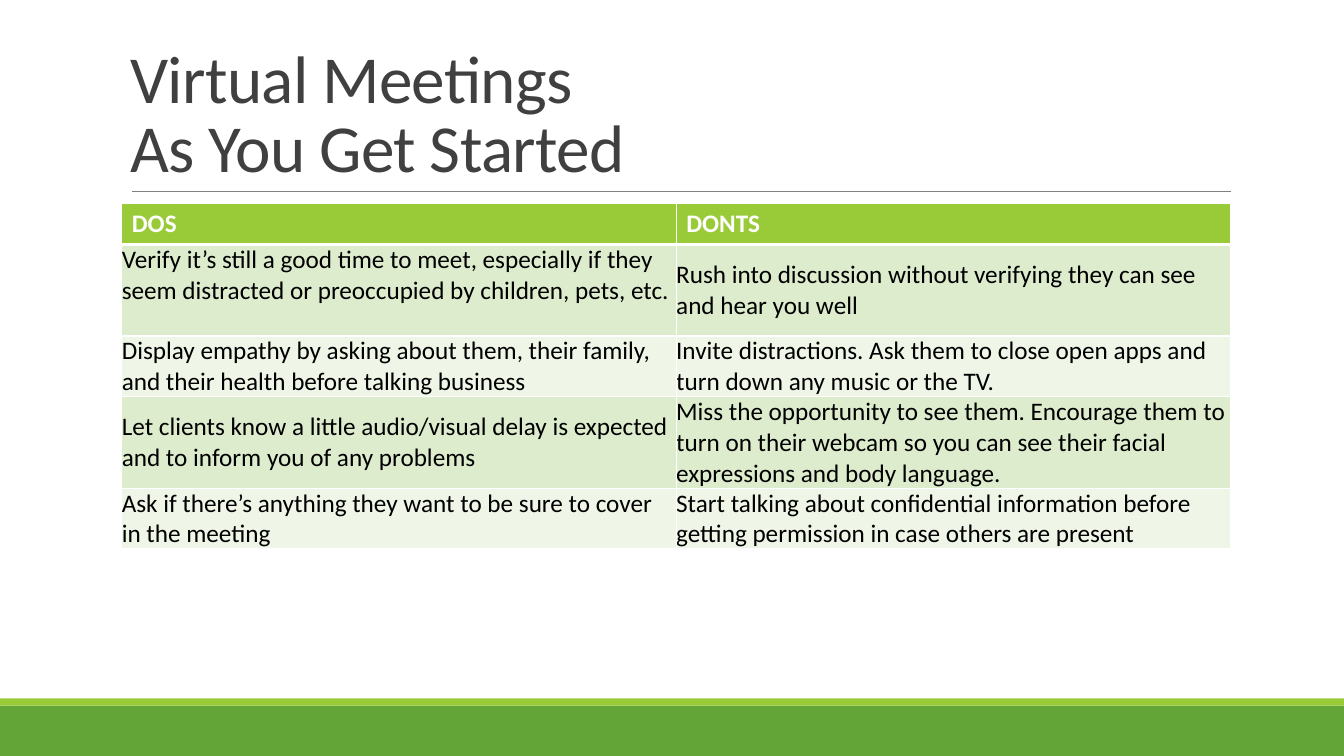
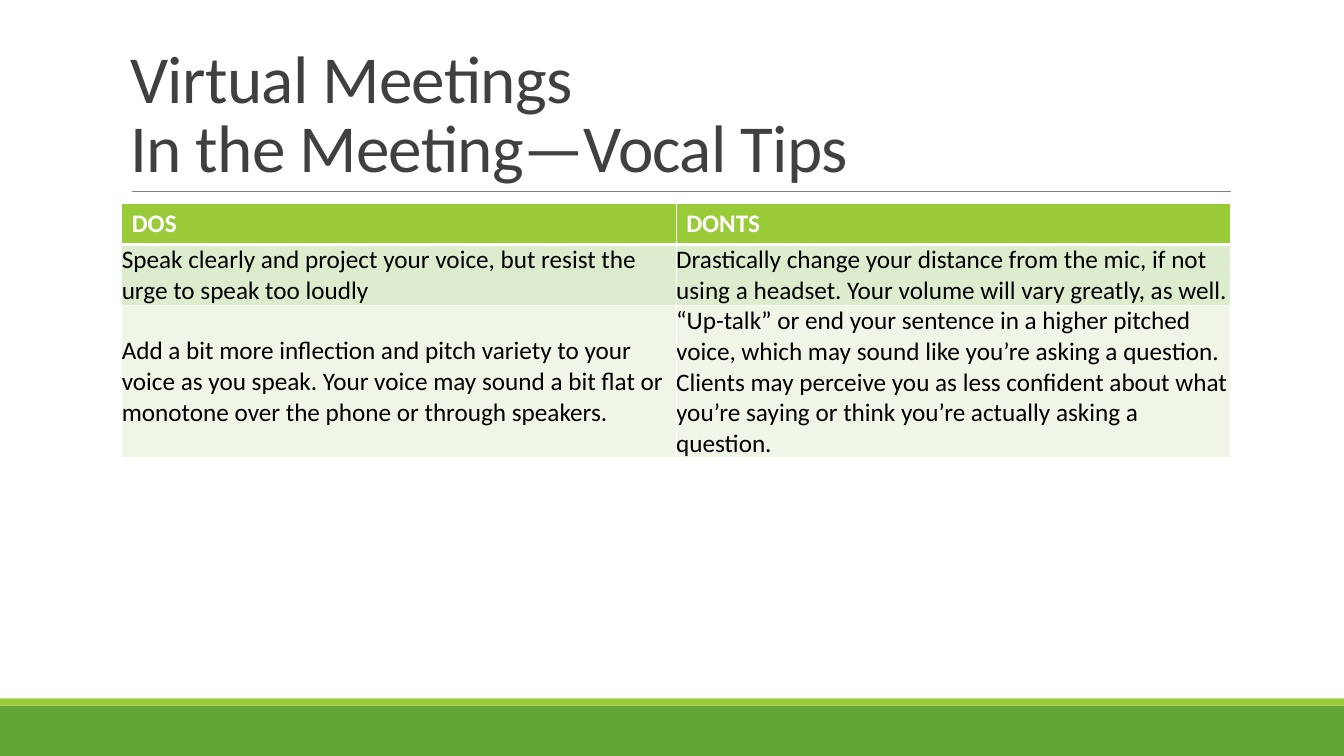
from dataclasses import dataclass

from lxml.etree import SubElement
from pptx import Presentation
from pptx.dml.color import RGBColor
from pptx.enum.shapes import MSO_CONNECTOR as Connector, MSO_SHAPE as Preset
from pptx.enum.text import MSO_ANCHOR as Anchor
from pptx.oxml.ns import qn
from pptx.util import Emu, Pt


@dataclass(frozen=True)
class Theme:
    """Colours, font and type sizes of the deck."""
    font: str = "Calibri"
    title_size: int = 48
    body_size: int = 18
    title: str = "404040"
    body: str = "000000"
    white: str = "FFFFFF"
    rule: str = "808080"
    green: str = "63A537"
    lime: str = "99CB38"
    stripes: tuple = ("DEECCE", "EFF6E8")


@dataclass(frozen=True)
class Tip:
    """One table row: its height in text lines and its two sentences."""
    lines: int
    do: str
    dont: str
    do_anchor: Anchor = Anchor.MIDDLE


WIDTH, HEIGHT = 1280, 720
TABLE_LEFT, TABLE_TOP = 116, 194
COLUMN_WIDTH, HEADER_HEIGHT, LINE_HEIGHT = 528, 39, 29


def px(length):
    """Turn pixels at 96 to the inch into EMU."""
    return Emu(length * 9525)


class Deck:
    """Holds the style and the current slide."""

    def __init__(self, theme):
        """Start an empty widescreen presentation."""
        self.theme = theme
        self.presentation = Presentation()
        self.presentation.slide_width = px(WIDTH)
        self.presentation.slide_height = px(HEIGHT)
        self.slide = None

    def add_slide(self, *title_lines):
        """Add a slide with the shared bands, rule and title."""
        layout = self.presentation.slide_layouts[6]
        self.slide = self.presentation.slides.add_slide(layout)
        self.band(672, 48, self.theme.green)
        self.band(665, 7, self.theme.lime)
        self.rule(126, 1172, 182)
        self.title(title_lines)

    def band(self, top, height, color):
        """Draw a full-width band."""
        shape = self.slide.shapes.add_shape(
            Preset.RECTANGLE, 0, px(top), px(WIDTH), px(height))
        shape.shadow.inherit = False
        shape.fill.solid()
        shape.fill.fore_color.rgb = RGBColor.from_string(color)
        shape.line.fill.background()

    def rule(self, left, right, y):
        """Draw the thin line below the title."""
        line = self.slide.shapes.add_connector(
            Connector.STRAIGHT, px(left), px(y), px(right), px(y))
        line.line.color.rgb = RGBColor.from_string(self.theme.rule)
        line.line.width = Pt(0.5)
        SubElement(line._element.spPr, qn("a:effectLst"))

    def run(self, paragraph, text, size, color, bold=False):
        """Add one styled run to a paragraph."""
        run = paragraph.add_run()
        run.text = text
        run.font.name = self.theme.font
        run.font.size = Pt(size)
        run.font.bold = bold
        run.font.color.rgb = RGBColor.from_string(color)
        return run

    def title(self, lines):
        """Write the title, one line after another."""
        box = self.slide.shapes.add_textbox(px(115), px(30), px(1056), px(152))
        frame = box.text_frame
        frame.word_wrap = True
        frame.vertical_anchor = Anchor.BOTTOM
        paragraph = frame.paragraphs[0]
        paragraph.line_spacing = 0.85
        for index, text in enumerate(lines):
            if index:
                paragraph.add_line_break()
            run = self.run(paragraph, text, self.theme.title_size, self.theme.title)
            run._r.get_or_add_rPr().set("spc", "-50")

    def borders(self, cell, top, bottom):
        """Give a cell white borders, with top and bottom widths in points."""
        properties = cell._tc.get_or_add_tcPr()
        for side, width in (("L", 1), ("R", 1), ("T", top), ("B", bottom)):
            line = SubElement(properties, qn(f"a:ln{side}"), w=str(Pt(width)))
            fill = SubElement(line, qn("a:solidFill"))
            SubElement(fill, qn("a:srgbClr"), val=self.theme.white)

    def cell(self, cell, text, fill, color, bold=False):
        """Fill a table cell and write its text."""
        cell.fill.solid()
        cell.fill.fore_color.rgb = RGBColor.from_string(fill)
        self.run(cell.text_frame.paragraphs[0], text,
                 self.theme.body_size, color, bold)

    def header_cell(self, cell, text):
        """Write a column heading above a thick border."""
        self.borders(cell, 1, 3)
        self.cell(cell, text, self.theme.lime, self.theme.white, True)

    def tip_cell(self, cell, text, index, anchor):
        """Write a tip without margins on a striped row."""
        self.borders(cell, 1 if index else 3, 1)
        cell.margin_left = cell.margin_right = 0
        cell.margin_top = cell.margin_bottom = 0
        cell.vertical_anchor = anchor
        self.cell(cell, text, self.theme.stripes[index % 2], self.theme.body)

    def table(self, tips):
        """Set out tips in two columns."""
        heights = [HEADER_HEIGHT] + [tip.lines * LINE_HEIGHT for tip in tips]
        table = self.slide.shapes.add_table(
            len(heights), 2, px(TABLE_LEFT), px(TABLE_TOP),
            px(2 * COLUMN_WIDTH), px(sum(heights))).table
        for row, height in zip(table.rows, heights):
            row.height = px(height)
        for column, heading in enumerate(("DOS", "DONTS")):
            self.header_cell(table.cell(0, column), heading)
        for index, tip in enumerate(tips):
            self.tip_cell(table.cell(index + 1, 0), tip.do, index, tip.do_anchor)
            self.tip_cell(table.cell(index + 1, 1), tip.dont, index, Anchor.MIDDLE)


START_TIPS = (
    Tip(3, "Verify it’s still a good time to meet, especially if they seem "
        "distracted or preoccupied by children, pets, etc.",
        "Rush into discussion without verifying they can see and hear you well",
        Anchor.TOP),
    Tip(2, "Display empathy by asking about them, their family, and their "
        "health before talking business",
        "Invite distractions. Ask them to close open apps and turn down any "
        "music or the TV."),
    Tip(3, "Let clients know a little audio/visual delay is expected and to "
        "inform you of any problems",
        "Miss the opportunity to see them. Encourage them to turn on their "
        "webcam so you can see their facial expressions and body language."),
    Tip(2, "Ask if there’s anything they want to be sure to cover in the meeting",
        "Start talking about confidential information before getting "
        "permission in case others are present"),
)

VOCAL_TIPS = (
    Tip(2, "Speak clearly and project your voice, but resist the urge to speak "
        "too loudly",
        "Drastically change your distance from the mic, if not using a "
        "headset. Your volume will vary greatly, as well."),
    Tip(5, "Add a bit more inflection and pitch variety to your voice as you "
        "speak. Your voice may sound a bit flat or monotone over the phone or "
        "through speakers.",
        "“Up-talk” or end your sentence in a higher pitched voice, which may "
        "sound like you’re asking a question. Clients may perceive you as less "
        "confident about what you’re saying or think you’re actually asking a "
        "question."),
)


def main():
    """Build and save both slides."""
    deck = Deck(Theme())
    for subtitle, tips in (("As You Get Started", START_TIPS),
                           ("In the Meeting—Vocal Tips", VOCAL_TIPS)):
        deck.add_slide("Virtual Meetings", subtitle)
        deck.table(tips)
    deck.presentation.save("out.pptx")


if __name__ == "__main__":
    main()
